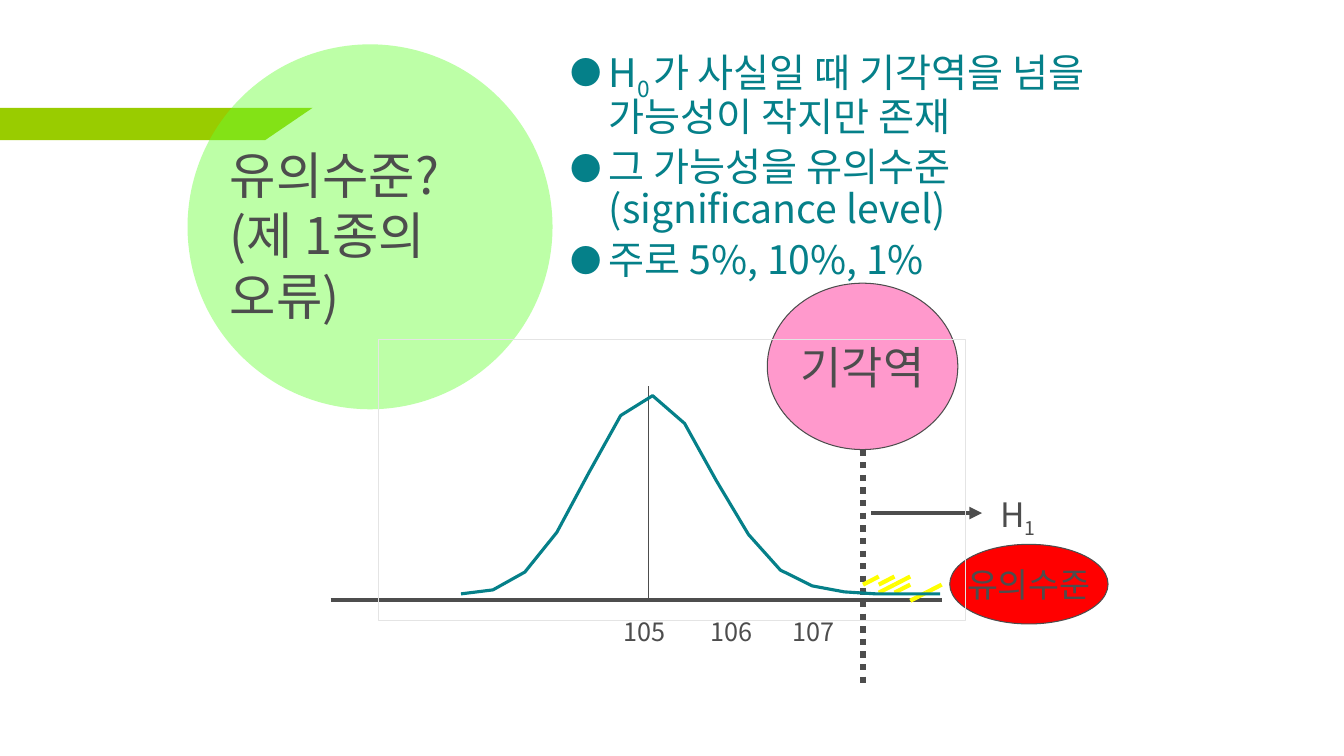
from dataclasses import dataclass

from lxml.etree import SubElement
from pptx import Presentation
from pptx.chart.data import XyChartData
from pptx.dml.color import RGBColor as Rgb
from pptx.enum.chart import XL_CHART_TYPE as ChartType, XL_MARKER_STYLE as Marker
from pptx.enum.dml import MSO_LINE as Dash
from pptx.enum.shapes import MSO_CONNECTOR as Connector, MSO_SHAPE as Shape
from pptx.enum.text import MSO_ANCHOR as Anchor, PP_ALIGN as Align
from pptx.oxml import parse_xml
from pptx.oxml.ns import nsdecls, qn
from pptx.util import Inches, Pt


@dataclass(frozen=True)
class Theme:
    font: str = "Noto Sans CJK KR"
    ink: str = "4D4D4D"
    teal: str = "058089"
    band: str = "99CC00"
    circle: str = "66FF33"
    pink: str = "FF99CC"
    red: str = "FF0000"
    yellow: str = "FFFF00"
    frame: str = "E4E4E4"
    title: int = 36
    callout: int = 32
    body: int = 28
    label: int = 24
    axis: int = 18
    small: int = 10


class SlideBuilder:
    def __init__(self, page, theme):
        self.page = page
        self.theme = theme

    def paint(self, shape, fill, outline=None, alpha=None):
        shape.shadow.inherit = False
        shape.fill.solid()
        shape.fill.fore_color.rgb = Rgb.from_string(fill)
        if alpha:
            color = shape.fill._xPr.find(".//" + qn("a:srgbClr"))
            SubElement(color, qn("a:alpha")).set("val", str(alpha * 1000))
        if outline:
            shape.line.color.rgb = Rgb.from_string(outline)
            shape.line.width = Pt(0.75)
        else:
            shape.line.fill.background()

    def polygon(self, points, fill):
        points = [(Inches(x), Inches(y)) for x, y in points]
        builder = self.page.shapes.build_freeform(*points[0])
        builder.add_line_segments(points[1:], close=True)
        self.paint(builder.convert_to_shape(), fill)

    def ellipse(self, area, fill, outline=None, alpha=None, text=None, size=None):
        shape = self.page.shapes.add_shape(Shape.OVAL, *map(Inches, area))
        self.paint(shape, fill, outline, alpha)
        if text:
            frame = shape.text_frame
            frame.word_wrap = False
            frame.vertical_anchor = Anchor.MIDDLE
            para = frame.paragraphs[0]
            para.text = text
            para.alignment = Align.CENTER
            self.style(para, size, self.theme.ink)

    def style(self, para, size, color):
        para.font.name = self.theme.font
        para.font.size = Pt(size)
        para.font.color.rgb = Rgb.from_string(color)
        defaults = para._p.pPr.find(qn("a:defRPr"))
        SubElement(defaults, qn("a:ea")).set("typeface", self.theme.font)

    def add_spans(self, para, spans):
        """Each span is plain text or (text, size, baseline percent)."""
        for item in spans:
            text, size, baseline = (item, None, None) if isinstance(item, str) else item
            span = para.add_run()
            span.text = text
            if size:
                span.font.size = Pt(size)
            if baseline:
                span._r.get_or_add_rPr().set("baseline", str(baseline * 1000))

    def text(self, area, lines, size, color, anchor=Anchor.TOP, bullets=False, tabs=()):
        box = self.page.shapes.add_textbox(*map(Inches, area))
        frame = box.text_frame
        frame.word_wrap = True
        frame.vertical_anchor = anchor
        for index, line in enumerate(lines):
            para = frame.add_paragraph() if index else frame.paragraphs[0]
            if isinstance(line, str):
                para.text = line
            else:
                self.add_spans(para, line)
            self.style(para, size, color)
            if bullets:
                self.bullet(para, color)
            if tabs:
                stops = "".join(f'<a:tab pos="{Inches(tab)}" algn="l"/>' for tab in tabs)
                self.paragraph_xml(para, f"<a:tabLst {nsdecls('a')}>{stops}</a:tabLst>")

    def paragraph_xml(self, para, xml):
        para._p.pPr.find(qn("a:defRPr")).addprevious(parse_xml(xml))

    def bullet(self, para, color):
        para.line_spacing = 0.9
        para.space_before = Pt(0.2 * self.theme.body)
        para._p.pPr.set("marL", str(Inches(0.38)))
        para._p.pPr.set("indent", str(-Inches(0.38)))
        space = nsdecls("a")
        for xml in (f'<a:buClr {space}><a:srgbClr val="{color}"/></a:buClr>',
                    f'<a:buSzPct {space} val="80000"/>',
                    f'<a:buFont {space} typeface="{self.theme.font}"/>',
                    f'<a:buChar {space} char="●"/>'):
            self.paragraph_xml(para, xml)

    def line(self, start, end, color, width, dash=None, arrow=False):
        link = self.page.shapes.add_connector(
            Connector.STRAIGHT, *map(Inches, (*start, *end)))
        link.line.color.rgb = Rgb.from_string(color)
        link.line.width = Pt(width)
        if dash:
            link.line.dash_style = dash
        if arrow:
            SubElement(link.line._get_or_add_ln(), qn("a:tailEnd")).set("type", "triangle")
        SubElement(link._element.spPr, qn("a:effectLst"))

    def curve(self, area, values, layout):
        data = XyChartData()
        points = data.add_series("Series 1")
        for x, y in enumerate(values):
            points.add_data_point(x, y)
        chart = self.page.shapes.add_chart(
            ChartType.XY_SCATTER_SMOOTH_NO_MARKERS, *map(Inches, area), data).chart
        chart.has_legend = chart.has_title = False
        chart.font.name = self.theme.font
        chart.font.size = Pt(self.theme.small)
        chart.font.color.rgb = Rgb.from_string(self.theme.ink)
        for axis, low, high in ((chart.category_axis, -1, 15), (chart.value_axis, 0, 120)):
            axis.minimum_scale, axis.maximum_scale = low, high
            axis.has_major_gridlines = False
            axis.visible = False
        plot = chart.plots[0]
        plot.vary_by_categories = False
        series = plot.series[0]
        series.smooth = True
        series.marker.style = Marker.NONE
        series.format.line.color.rgb = Rgb.from_string(self.theme.teal)
        series.format.line.width = Pt(2.25)

        # Inner plot position and chart frame
        plot_area = chart._chartSpace.chart.plotArea
        for old in plot_area.findall(qn("c:layout")):
            plot_area.remove(old)
        sizes = "".join(f'<c:{key} val="{value}"/>' for key, value in zip("xywh", layout))
        plot_area.insert(0, parse_xml(
            f'<c:layout {nsdecls("c")}><c:manualLayout><c:layoutTarget val="inner"/>'
            f'<c:xMode val="edge"/><c:yMode val="edge"/>{sizes}</c:manualLayout></c:layout>'))
        chart._chartSpace.chart.addnext(parse_xml(
            f'<c:spPr {nsdecls("c", "a")}><a:noFill/><a:ln w="{Pt(0.75)}"><a:solidFill>'
            f'<a:srgbClr val="{self.theme.frame}"/></a:solidFill></a:ln></c:spPr>'))


def main():
    deck = Presentation()
    deck.slide_width, deck.slide_height = Inches(13.33), Inches(7.5)
    theme = Theme()
    slide = SlideBuilder(deck.slides.add_slide(deck.slide_layouts[6]), theme)

    # Title on its band and circle
    slide.polygon([(0, 1.07), (3.1, 1.07), (2.63, 1.39), (0, 1.39)], theme.band)
    slide.ellipse((1.86, 0.44, 3.62, 3.62), theme.circle, alpha=43)
    slide.text((2.18, 0.76, 2.76, 3.14), ["유의수준?\v(제 1종의 오류)"],
               theme.title, theme.ink, Anchor.MIDDLE)

    # Horizontal axis, mean and critical value
    slide.line((3.28, 5.95), (9.34, 5.95), theme.ink, 3)
    slide.text((6.09, 6.07, 3.49, 0.4), ["105\t106\t107"], theme.axis, theme.ink,
               tabs=(0.86, 1.67))
    slide.line((6.43, 3.83), (6.43, 5.95), theme.ink, 0.75)
    slide.line((8.56, 4.46), (8.56, 6.82), theme.ink, 4.5, dash=Dash.ROUND_DOT)

    # Rejection region
    slide.line((8.64, 5.09), (9.74, 5.09), theme.ink, 3, arrow=True)
    slide.text((9.82, 4.85, 0.89, 0.5), [["H", ("1", None, -25)]], theme.label, theme.ink)
    slide.ellipse((7.61, 2.81, 1.89, 1.65), theme.pink, theme.ink,
                  text="기각역", size=theme.callout)

    # Explanation
    slide.text((5.56, 0.44, 5.51, 2.44), [
        ["H", ("0", None, -25), (" ", theme.small, None),
         "가 사실일 때 기각역을 넘을 가능성이 작지만 존재"],
        "그 가능성을 유의수준(significance level)",
        "주로 5%, 10%, 1%",
    ], theme.body, theme.teal, bullets=True)

    # Hatching of the tail, by column and row
    for column, row in ((0, 0), (1, 0), (1, 1), (2, 1), (3, 2), (4, 1), (2, 0)):
        left, top = 8.56 + 0.156 * column, 5.72 + 0.08 * row
        slide.line((left + 0.156, top), (left, top + 0.08), theme.yellow, 3)
    slide.ellipse((9.42, 5.4, 1.57, 0.79), theme.red, theme.ink,
                  text="유의수준", size=theme.label)

    # Distribution curve
    slide.curve((3.75, 3.36, 5.83, 2.8),
                (0, 2, 11, 31, 61, 90, 100, 86, 57, 30, 12, 4, 1, 0, 0, 0),
                (0.086, 0.06, 0.871, 0.846))
    deck.save("out.pptx")


if __name__ == "__main__":
    main()
